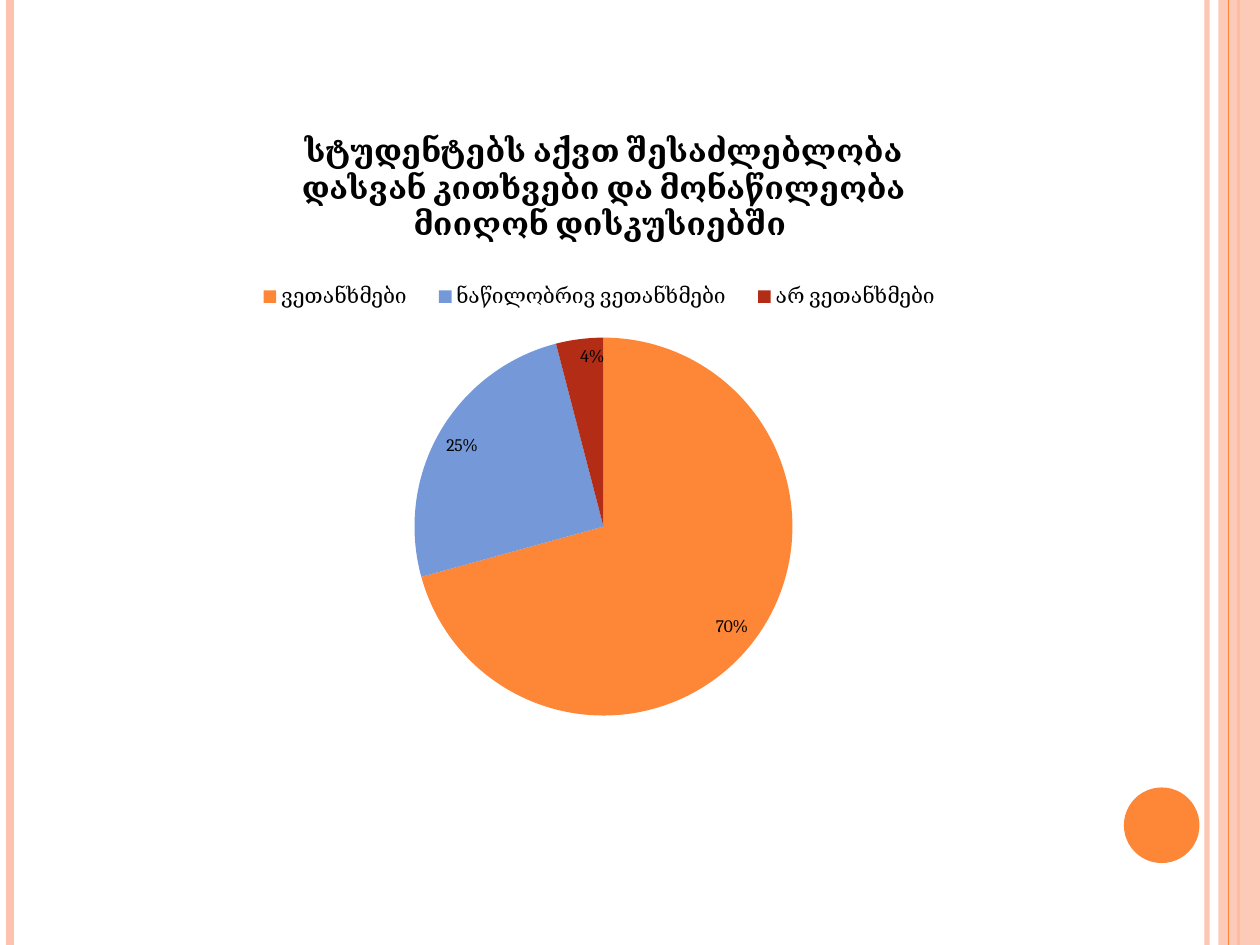
from lxml.etree import SubElement
from pptx import Presentation
from pptx.chart.data import CategoryChartData
from pptx.dml.color import RGBColor
from pptx.enum.chart import XL_CHART_TYPE, XL_LABEL_POSITION, XL_LEGEND_POSITION
from pptx.enum.shapes import MSO_CONNECTOR, MSO_SHAPE
from pptx.oxml import parse_xml
from pptx.oxml.ns import nsdecls, qn
from pptx.util import Inches, Pt

ORANGE = RGBColor(0xFE, 0x86, 0x37)
PEACH = RGBColor(0xFE, 0xC3, 0xAE)
BLUE = RGBColor(0x75, 0x98, 0xD9)
RED = RGBColor(0xB3, 0x2C, 0x16)
BLACK = RGBColor(0, 0, 0)
FONT = "Cambria"
WIDTH, HEIGHT = Inches(10), Inches(7.5)

TITLE = "სტუდენტებს აქვთ შესაძლებლობა დასვან კითხვები და მონაწილეობა მიიღონ დისკუსიებში "
ANSWERS = [
    ("ვეთანხმები", 70, ORANGE),
    ("ნაწილობრივ ვეთანხმები", 25, BLUE),
    ("არ ვეთანხმები", 4, RED),
]


def set_alpha(color_parent, percent):
    color = next(color_parent.iter(qn("a:srgbClr")))
    SubElement(color, qn("a:alpha")).set("val", str(percent * 1000))


def format_font(font, size, bold=False):
    font.name, font.size, font.bold = FONT, Pt(size), bold
    font.color.rgb = BLACK


def add_text(tf, text, **fmt):
    r = tf.paragraphs[0].add_run()
    r.text = text
    format_font(r.font, **fmt)


def add_stripe(slide, x, color, weight, alpha=None):
    """Full-height vertical line."""
    line = slide.shapes.add_connector(MSO_CONNECTOR.STRAIGHT, x, 0, x, HEIGHT)
    line.line.color.rgb = color
    line.line.width = Pt(weight)
    sp_pr = line._element.spPr
    if alpha:
        set_alpha(sp_pr, alpha)
    SubElement(sp_pr, qn("a:effectLst"))


def add_solid(slide, kind, box, color, alpha=None):
    sp = slide.shapes.add_shape(kind, *box)
    sp.shadow.inherit = False
    sp.fill.solid()
    sp.fill.fore_color.rgb = color
    sp.line.fill.background()
    if alpha:
        set_alpha(sp._element.spPr, alpha)


def add_frame(slide):
    """Side stripes, right band and corner disc."""
    add_stripe(slide, Inches(9.58), PEACH, 3, alpha=93)
    add_stripe(slide, Inches(0.08), PEACH, 4.5)
    add_stripe(slide, Inches(9.83), ORANGE, 1.5)
    band = Inches(0.33)
    add_solid(slide, MSO_SHAPE.RECTANGLE, (WIDTH - band, 0, band, HEIGHT), PEACH, alpha=87)
    add_stripe(slide, Inches(9.75), ORANGE, 0.75)
    disc = Inches(0.6)
    add_solid(slide, MSO_SHAPE.OVAL, (Inches(8.92), Inches(6.25), disc, disc), ORANGE)


def set_layout(part, index, target="", **shares):
    """Fix a chart part's box as shares of the chart's size."""
    places = "".join(f'<c:{key} val="{val}"/>' for key, val in shares.items())
    layout = parse_xml(
        f'<c:layout {nsdecls("c")}><c:manualLayout>{target}'
        f'<c:xMode val="edge"/><c:yMode val="edge"/>{places}</c:manualLayout></c:layout>')
    for old in part.findall(qn("c:layout")):
        part.remove(old)
    part.insert(index, layout)


def add_pie(slide, box):
    names, values, colors = zip(*ANSWERS)
    data = CategoryChartData()
    data.categories = names
    data.add_series("Series 1", values)
    chart = slide.shapes.add_chart(XL_CHART_TYPE.PIE, *box, data).chart
    format_font(chart.font, size=10)

    # Title and legend
    chart.has_title = True
    add_text(chart.chart_title.text_frame, TITLE, size=18, bold=True)
    chart.chart_title.include_in_layout = False
    chart.has_legend = True
    chart.legend.position = XL_LEGEND_POSITION.TOP
    chart.legend.include_in_layout = False
    format_font(chart.legend.font, size=12)
    set_layout(chart.legend._element, 1, x=0.06, y=0.27, w=0.87, h=0.07)

    # Slices and labels
    plot = chart.plots[0]
    plot.vary_by_categories = True
    for i, color in enumerate(colors):
        fill = plot.series[0].points[i].format.fill
        fill.solid()
        fill.fore_color.rgb = color
    plot.has_data_labels = True
    labels = plot.data_labels
    labels.show_value = True
    labels.number_format, labels.number_format_is_linked = '0"%"', False
    labels.position = XL_LABEL_POSITION.INSIDE_END
    format_font(labels.font, size=10)
    set_layout(chart._chartSpace.chart.plotArea, 0, '<c:layoutTarget val="inner"/>',
               x=0.27, y=0.37, w=0.46, h=0.6)


def main():
    prs = Presentation()
    prs.slide_width, prs.slide_height = WIDTH, HEIGHT
    slide = prs.slides.add_slide(prs.slide_layouts[6])
    add_frame(slide)
    add_pie(slide, (Inches(1.5), Inches(0.83), Inches(6.58), Inches(5)))
    prs.save("out.pptx")


if __name__ == "__main__":
    main()
